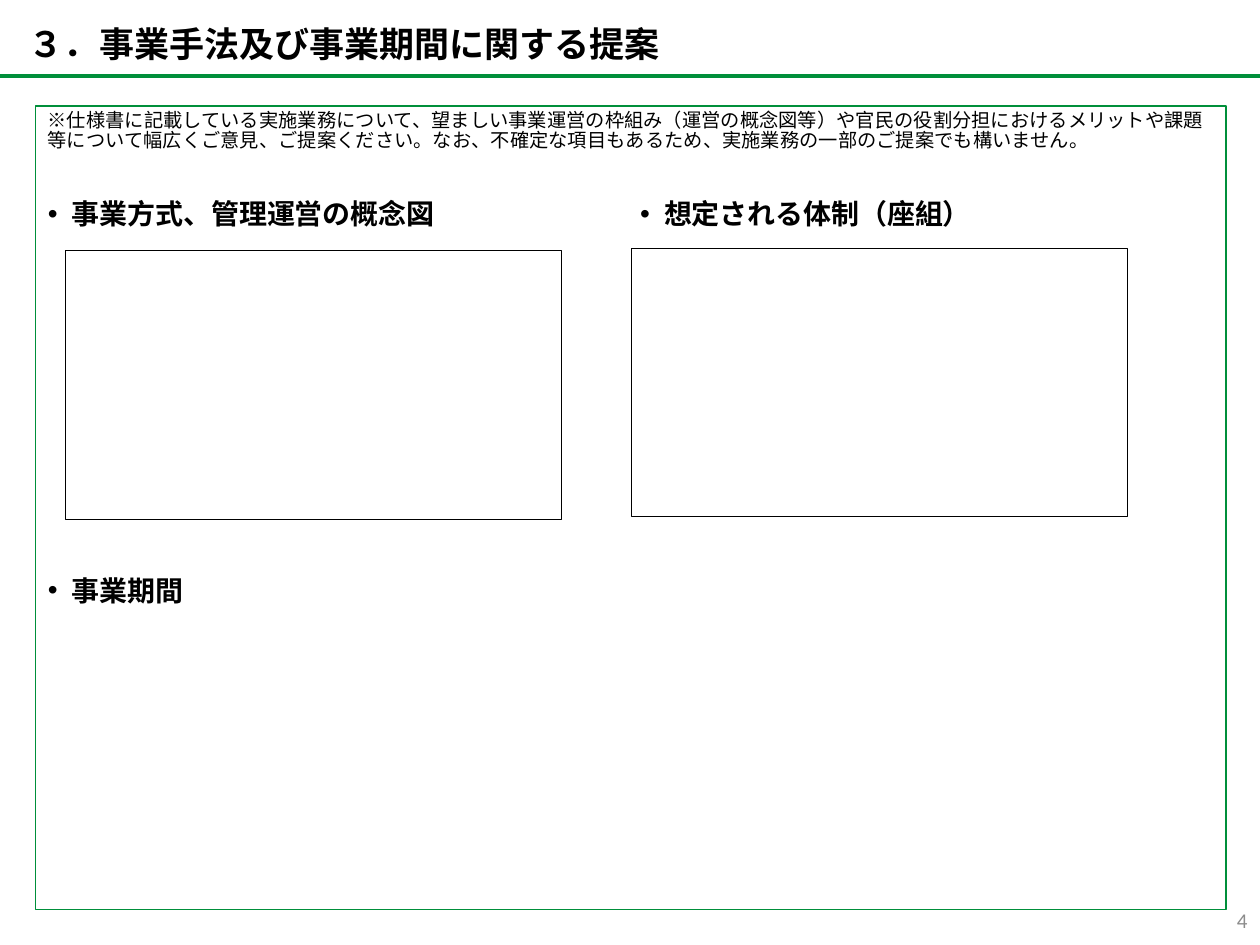
from dataclasses import dataclass

from lxml import etree
from pptx import Presentation
from pptx.dml.color import RGBColor
from pptx.enum.shapes import MSO_CONNECTOR, MSO_SHAPE
from pptx.enum.text import MSO_ANCHOR, MSO_AUTO_SIZE, PP_ALIGN
from pptx.oxml.ns import qn
from pptx.util import Inches, Pt

STRAIGHT = MSO_CONNECTOR.STRAIGHT
RECTANGLE = MSO_SHAPE.RECTANGLE
TOP, MIDDLE = MSO_ANCHOR.TOP, MSO_ANCHOR.MIDDLE
LEFT, RIGHT = PP_ALIGN.LEFT, PP_ALIGN.RIGHT
NO_AUTOFIT = MSO_AUTO_SIZE.NONE
COMPARISON_LAYOUT = 4
JAPANESE_FONT = "Noto Sans CJK JP"
GREEN, BLACK, GRAY = "008F3A", "000000", "8C8C8C"
BULLET_INDENT = Inches(0.19)


@dataclass(frozen=True)
class Area:
    left: float
    top: float
    width: float
    height: float


@dataclass(frozen=True)
class TextStyle:
    size: float
    font: str = JAPANESE_FONT
    color: str = BLACK
    bold: bool = False
    line_spacing: float = 1.0


@dataclass(frozen=True)
class Heading:
    text: str
    left: float
    top: float


TITLE_STYLE = TextStyle(20, font="Arial", bold=True)
NOTE_STYLE = TextStyle(11, line_spacing=0.86)
HEADING_STYLE = TextStyle(16, bold=True, line_spacing=0.86)
NUMBER_STYLE = TextStyle(12, font="Calibri", color=GRAY)

NOTE = (
    "※仕様書に記載している実施業務について、望ましい事業運営の枠組み（運営の概念図等）や"
    "官民の役割分担におけるメリットや課題等について幅広くご意見、ご提案ください。"
    "なお、不確定な項目もあるため、実施業務の一部のご提案でも構いません。"
)
HEADINGS = [
    Heading("事業方式、管理運営の概念図", 0.28, 1.55),
    Heading("事業期間", 0.28, 4.54),
    Heading("想定される体制（座組）", 4.98, 1.55),
]
ANSWER_BOXES = [Area(0.52, 1.99, 3.94, 2.13), Area(5.01, 1.97, 3.94, 2.13)]


def rgb(color: str) -> RGBColor:
    return RGBColor.from_string(color)


def move(shape, area: Area) -> None:
    shape.left, shape.top = Inches(area.left), Inches(area.top)
    shape.width, shape.height = Inches(area.width), Inches(area.height)


def write(shape, text: str, style: TextStyle, anchor=TOP, alignment=LEFT):
    frame = shape.text_frame
    frame.word_wrap = True
    frame.auto_size = NO_AUTOFIT
    frame.vertical_anchor = anchor
    paragraph = frame.paragraphs[0]
    paragraph.alignment = alignment
    paragraph.line_spacing = style.line_spacing
    run = paragraph.add_run()
    run.text = text
    run.font.size = Pt(style.size)
    run.font.name = style.font
    run.font.bold = style.bold
    run.font.color.rgb = rgb(style.color)
    east_asian = etree.Element(qn("a:ea"), typeface=JAPANESE_FONT)
    run.font._element.find(qn("a:latin")).addnext(east_asian)
    return paragraph


def add_bullet(paragraph) -> None:
    properties = paragraph._p.get_or_add_pPr()
    properties.set("marL", str(BULLET_INDENT))
    properties.set("indent", str(-BULLET_INDENT))
    etree.SubElement(properties, qn("a:buFont"), typeface="Arial")
    etree.SubElement(properties, qn("a:buChar"), char="•")


def add_outline(slide, area: Area, color: str, line_width: float):
    shape = slide.shapes.add_shape(
        RECTANGLE, Inches(area.left), Inches(area.top),
        Inches(area.width), Inches(area.height))
    shape.shadow.inherit = False
    shape.fill.background()
    shape.line.color.rgb = rgb(color)
    shape.line.width = Pt(line_width)
    return shape


def add_title(slide) -> None:
    title = slide.shapes.title
    move(title, Area(0.13, 0.11, 6.43, 0.45))
    write(title, "３．事業手法及び事業期間に関する提案", TITLE_STYLE)
    title.text_frame.margin_top = Inches(0.07)


def add_title_rule(slide) -> None:
    rule = slide.shapes.add_connector(
        STRAIGHT, Inches(0), Inches(0.6), Inches(10), Inches(0.6))
    rule.line.color.rgb = rgb(GREEN)
    rule.line.width = Pt(2.25)
    etree.SubElement(rule._element.spPr, qn("a:effectLst"))


def add_headings(slide) -> None:
    title, *bodies = list(slide.placeholders)
    for heading, body in zip(HEADINGS, bodies):
        move(body, Area(heading.left, heading.top, 4.19, 0.43))
        add_bullet(write(body, heading.text, HEADING_STYLE))
    for unused in bodies[len(HEADINGS):]:
        unused._element.getparent().remove(unused._element)


def add_page_number(slide) -> None:
    number = slide.shapes.add_textbox(
        Inches(7.67), Inches(7.1), Inches(2.33), Inches(0.4))
    write(number, "4", NUMBER_STYLE, MIDDLE, RIGHT)


def main() -> None:
    """Build the proposal slide on business method and period."""
    presentation = Presentation()
    presentation.slide_width = Inches(10)
    presentation.slide_height = Inches(7.5)
    layout = presentation.slide_layouts[COMPARISON_LAYOUT]
    slide = presentation.slides.add_slide(layout)
    add_title(slide)
    add_headings(slide)
    note_frame = add_outline(slide, Area(0.28, 0.84, 9.45, 6.38), GREEN, 0.75)
    write(note_frame, NOTE, NOTE_STYLE)
    add_title_rule(slide)
    for area in ANSWER_BOXES:
        add_outline(slide, area, BLACK, 0.5)
    add_page_number(slide)
    presentation.save("out.pptx")


if __name__ == "__main__":
    main()
